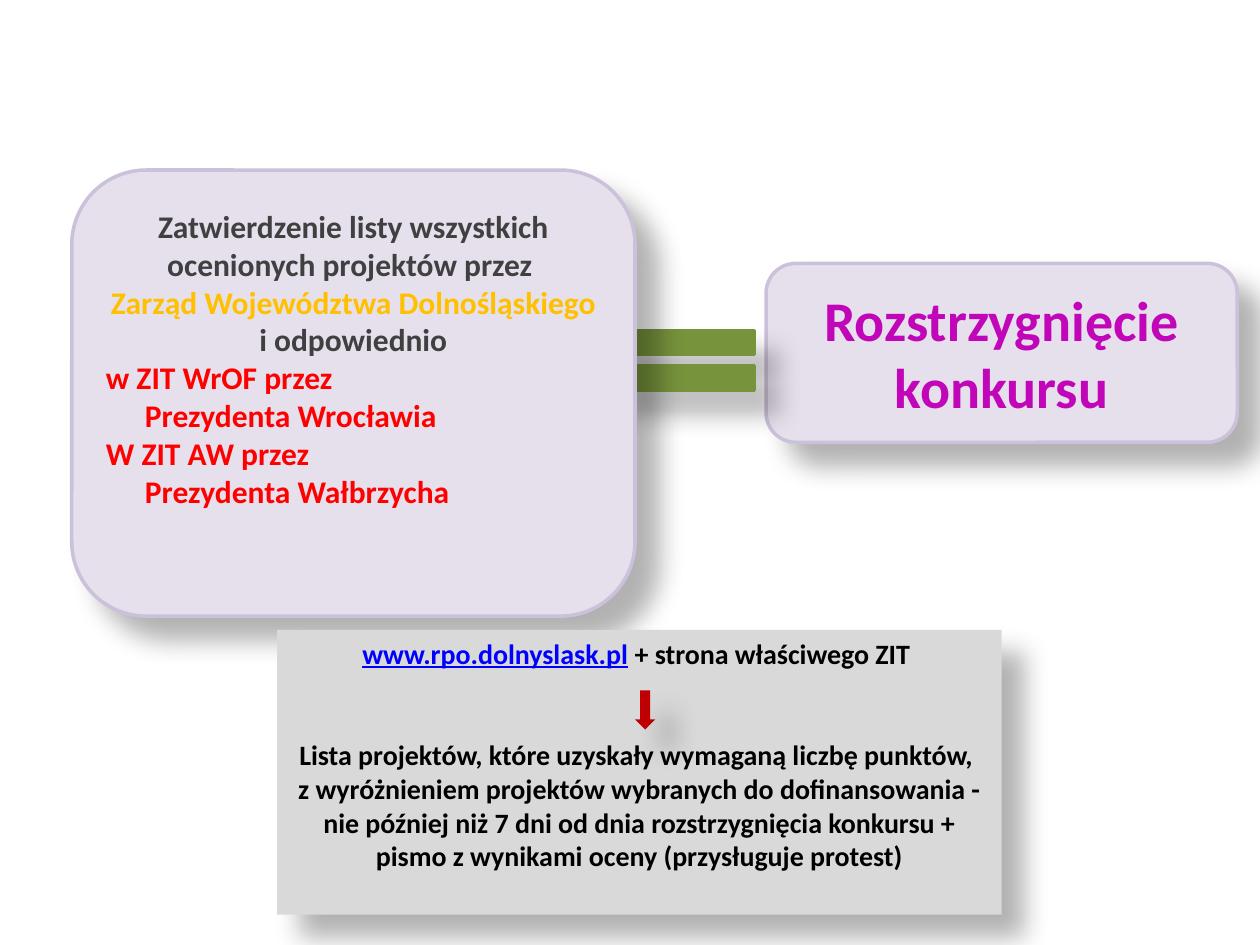
from pptx import Presentation
from pptx.dml.color import RGBColor
from pptx.enum.shapes import MSO_SHAPE as Kind
from pptx.enum.text import MSO_ANCHOR as Anchor, PP_ALIGN as Align
from pptx.oxml import parse_xml
from pptx.oxml.ns import nsdecls
from pptx.util import Inches, Pt

SHADE = (
    f'<a:effectLst {nsdecls("a")}>'
    f'<a:outerShdw blurRad="{Pt(15)}" dist="{Pt(18)}" dir="2700000" algn="tl" rotWithShape="0">'
    '<a:srgbClr val="000000"><a:alpha val="30000"/></a:srgbClr>'
    '</a:outerShdw></a:effectLst>'
)


def color(text):
    return RGBColor.from_string(text)


def write(para, text, size=18, ink="000000", under=False):
    """Add text to a paragraph; a newline becomes a line break."""
    for i, part in enumerate(text.split("\n")):
        if i:
            para.add_line_break()
        run = para.add_run()
        run.text = part
        font = run.font
        font.name, font.size, font.bold = "Calibri", Pt(size), True
        font.underline = under
        font.color.rgb = color(ink)


class Deck:
    lilac, edge = "E6E0EC", "CCC1DA"

    def __init__(self, wide, high):
        self.file = Presentation()
        self.file.slide_width, self.file.slide_height = Inches(wide), Inches(high)
        self.slide = self.file.slides.add_slide(self.file.slide_layouts[6])

    def shape(self, kind, area, fill, line=None):
        item = self.slide.shapes.add_shape(kind, *map(Inches, area))
        item.fill.solid()
        item.fill.fore_color.rgb = color(fill)
        if line:
            item.line.color.rgb = color(line)
            item.line.width = Pt(2)
        else:
            item.line.fill.background()
        item.shadow.inherit = False
        props = item.fill._xPr
        props.remove(props.find("{*}effectLst"))
        props.append(parse_xml(SHADE))
        return item

    def card(self, area):
        return self.shape(Kind.ROUNDED_RECTANGLE, area, self.lilac, self.edge)

    def frame(self, item, anchor, top=0.05):
        frame = item.text_frame
        frame.word_wrap = True
        frame.vertical_anchor = anchor
        frame.margin_top = Inches(top)
        return frame

    def para(self, frame, runs, align=Align.CENTER, indent=0, before=0, **form):
        """Add a paragraph of (text, format) runs sharing a base format."""
        para = frame.paragraphs[0]
        if para.runs:
            para = frame.add_paragraph()
        para.alignment = align
        if before:
            para.space_before = Pt(before)
        if indent:
            para._p.get_or_add_pPr().set("marL", str(Inches(indent)))
        for text, extra in runs:
            write(para, text, **{**form, **extra})


def main():
    deck = Deck(10, 7.5)

    # Outcome
    box = deck.frame(deck.card((6.08, 2.09, 3.74, 1.42)), Anchor.MIDDLE)
    deck.para(box, [("Rozstrzygnięcie konkursu", {})], size=32, ink="C105B8")

    # Equals sign
    deck.shape(Kind.MATH_EQUAL, (4.59, 2.46, 1.61, 0.8), "77933C", "77933C")

    # Approval of the list
    box = deck.frame(deck.card((0.57, 1.35, 4.47, 3.54)), Anchor.TOP, 0.12)
    grey = "404040"
    deck.para(box, [("Zatwierdzenie listy wszystkich ocenionych projektów przez ", {})], ink=grey)
    deck.para(box, [("Zarząd Województwa Dolnośląskiego", {"ink": "FFC000"}),
                    (" i odpowiednio", {})], ink=grey)
    for body, head in (("w ZIT WrOF przez", "Prezydenta Wrocławia"),
                       ("W ZIT AW przez", "Prezydenta Wałbrzycha")):
        for text, indent in ((body, 0), (head, 0.31)):
            deck.para(box, [(text, {})], align=Align.LEFT, indent=indent, ink="FF0000")

    # Publication of results
    note = deck.shape(Kind.RECTANGLE, (2.2, 5, 5.75, 2.26), "D9D9D9")
    box = deck.frame(note, Anchor.TOP)
    deck.para(box, [("www.rpo.dolnyslask.pl", {"ink": "0000FF", "under": True}),
                    (" + strona właściwego ZIT ", {})], size=16)
    deck.para(box, [("Lista projektów, które uzyskały wymaganą liczbę punktów, \n"
                     "z wyróżnieniem projektów wybranych do dofinansowania - "
                     "nie później niż 7 dni od dnia rozstrzygnięcia konkursu + "
                     "pismo z wynikami oceny (przysługuje protest)", {})], size=16, before=39)
    deck.shape(Kind.DOWN_ARROW, (5.04, 5.48, 0.16, 0.31), "C00000")

    deck.file.save("out.pptx")


if __name__ == "__main__":
    main()
